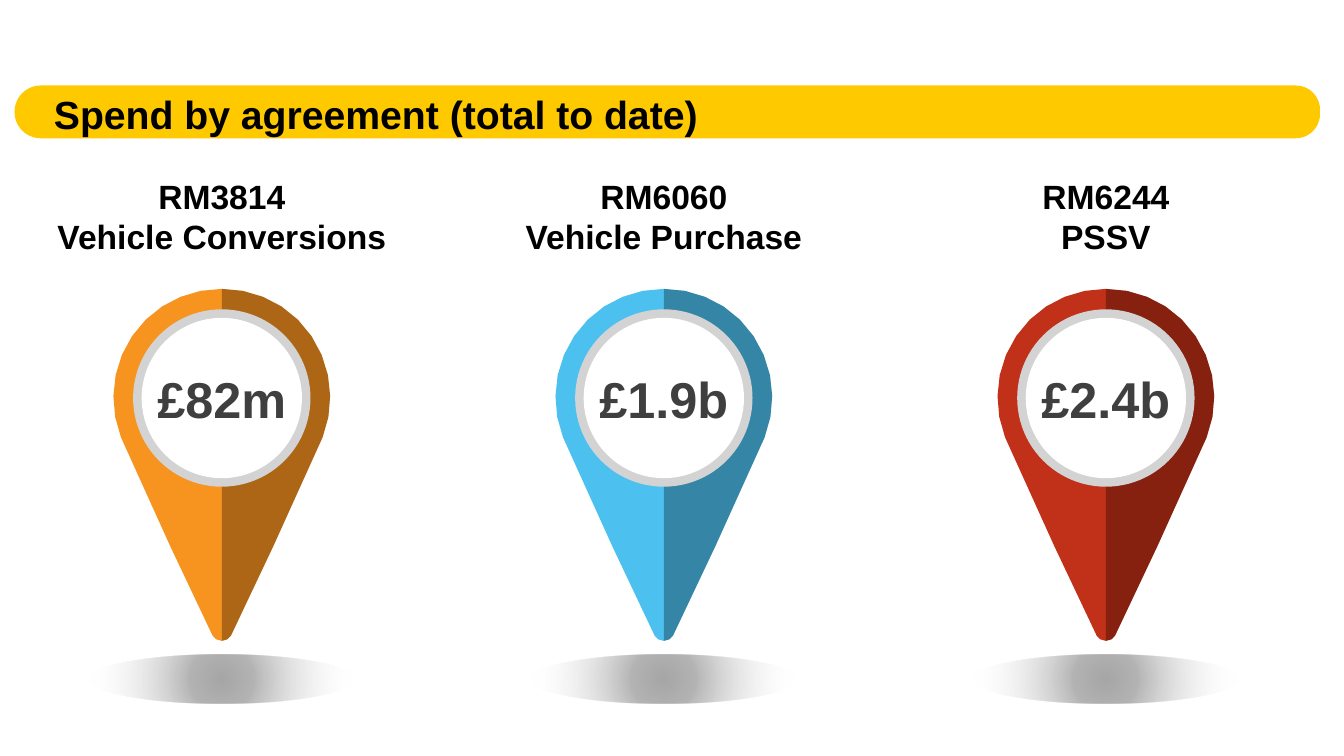
import dataclasses

import pptx
import pptx.dml.color
import pptx.enum.shapes
import pptx.enum.text
import pptx.oxml
import pptx.oxml.ns
import pptx.util

Cm = pptx.util.Cm
MSO_SHAPE = pptx.enum.shapes.MSO_SHAPE
PP_ALIGN = pptx.enum.text.PP_ALIGN
MSO_ANCHOR = pptx.enum.text.MSO_ANCHOR
Point = tuple[float, float]

FIRST_AXIS, PITCH = 5.59, 11.14
PIN_TOP = 7.28
DISC_CENTRE = 10.03


@dataclasses.dataclass(frozen=True)
class Agreement:
    code: str
    name: str
    spend: str
    color: str


AGREEMENTS = [
    Agreement("RM3814", "Vehicle Conversions", "£82m", "F7931F"),
    Agreement("RM6060", "Vehicle Purchase", "£1.9b", "4CC1EF"),
    Agreement("RM6244", "PSSV", "£2.4b", "C13018"),
]


def paint(sp, color: str, alpha: int = 100) -> None:
    """Give a shape a plain fill, with no outline or shadow."""
    sp.shadow.inherit = False
    sp.line.fill.background()
    sp.fill.solid()
    sp.fill.fore_color.rgb = pptx.dml.color.RGBColor.from_string(color)
    if alpha < 100:
        clr = sp.element.spPr.find(".//" + pptx.oxml.ns.qn("a:srgbClr"))
        clr.append(pptx.oxml.parse_xml(
            f'<a:alpha {pptx.oxml.ns.nsdecls("a")} val="{alpha * 1000}"/>'))


def add_run(p, text: str, size: int, color: str) -> None:
    r = p.add_run()
    r.text = text
    r.font.name = "Arial"
    r.font.size = pptx.util.Pt(size)
    r.font.bold = True
    r.font.color.rgb = pptx.dml.color.RGBColor.from_string(color)


def curve(a: Point, b: Point, c: Point, d: Point, steps: int) -> list[Point]:
    """Points along a cubic Bezier curve, without its start."""
    points = []
    for i in range(1, steps + 1):
        t = i / steps
        weights = ((1 - t) ** 3, 3 * t * (1 - t) ** 2, 3 * t * t * (1 - t), t ** 3)
        points.append(tuple(sum(w * q[k] for w, q in zip(weights, (a, b, c, d)))
                            for k in (0, 1)))
    return points


def right_half() -> list[Point]:
    """Right edge of a pin from top to tip, in cm from the top of its axis."""
    top, shoulder, waist, tip = (0, 0), (2.26, 1.19), (2.54, 3.74), (0, 8.87)
    return [top,
            *curve(top, (0.9, 0), (1.75, 0.43), shoulder, 5),
            *curve(shoulder, (2.77, 1.94), (2.87, 2.91), waist, 5),
            (1.3, 6.48), (0.23, 8.74),
            *curve((0.23, 8.74), (0.2, 8.81), (0.1, 8.87), tip, 2)]


def add_outline(shapes, axis: float, points: list[Point]):
    placed = [(Cm(axis + x), Cm(PIN_TOP + y)) for x, y in points]
    builder = shapes.build_freeform(*placed[0])
    builder.add_line_segments(placed[1:], close=True)
    return builder.convert_to_shape()


def add_ellipse(shapes, axis: float, middle: float, width: float, height: float):
    return shapes.add_shape(MSO_SHAPE.OVAL, Cm(axis - width / 2),
                            Cm(middle - height / 2), Cm(width), Cm(height))


def fade(sp) -> None:
    """Fill a shape with a dark centre that fades out to its edge."""
    paint(sp, "000000")
    stops = "".join(
        f'<a:gs pos="{pos * 1000}"><a:srgbClr val="{color}">'
        f'<a:alpha val="{alpha * 1000}"/></a:srgbClr></a:gs>'
        for pos, color, alpha in
        [(0, "000000", 35), (23, "262626", 35), (100, "FFFFFF", 0)])
    grad = pptx.oxml.parse_xml(
        f'<a:gradFill {pptx.oxml.ns.nsdecls("a")}><a:gsLst>{stops}</a:gsLst>'
        '<a:path path="circle"><a:fillToRect l="50000" t="50000" r="50000" '
        'b="50000"/></a:path></a:gradFill>')
    spPr = sp.element.spPr
    spPr.replace(spPr.find(pptx.oxml.ns.qn("a:solidFill")), grad)


def add_pin(s, agreement: Agreement, axis: float) -> None:
    shapes = s.shapes.add_group_shape().shapes
    right = right_half()
    left = [(-x, y) for x, y in reversed(right[1:-1])]
    paint(add_outline(shapes, axis, right + left), agreement.color)
    paint(add_outline(shapes, axis, right), "000000", 30)
    paint(add_ellipse(shapes, axis, DISC_CENTRE, 4.47, 4.47), "D3D3D3")
    disc = add_ellipse(shapes, axis, DISC_CENTRE, 4.04, 4.04)
    paint(disc, "FFFFFF")
    tf = disc.text_frame
    tf.word_wrap = False
    tf.vertical_anchor = MSO_ANCHOR.MIDDLE
    p = tf.paragraphs[0]
    p.alignment = PP_ALIGN.CENTER
    add_run(p, agreement.spend, 36, "3F3F3F")
    fade(add_ellipse(shapes, axis, 17.11, 6.65, 1.23))


def add_heading(s, agreement: Agreement, axis: float) -> None:
    width = 10.08
    tf = s.shapes.add_textbox(Cm(axis - width / 2), Cm(4.48), Cm(width),
                              Cm(2.11)).text_frame
    tf.word_wrap = True
    tf.vertical_anchor = MSO_ANCHOR.BOTTOM
    for p, text in ((tf.paragraphs[0], agreement.code),
                    (tf.add_paragraph(), agreement.name)):
        p.alignment = PP_ALIGN.CENTER
        add_run(p, text, 24, "000000")


def add_title_bar(s) -> None:
    bar = s.shapes.add_shape(MSO_SHAPE.ROUND_2_SAME_RECTANGLE, Cm(16.15),
                             Cm(-13.63), Cm(1.33), Cm(32.9))
    bar.rotation = 90
    bar.adjustments[0], bar.adjustments[1] = 0.46, 0.5
    paint(bar, "FFC900")


def set_title(s, text: str) -> None:
    title = s.shapes.title
    title.left, title.top, title.width, title.height = (
        Cm(1.11), Cm(2.03), Cm(17.42), Cm(0.94))
    s.shapes.element.append(title.element)
    tf = title.text_frame
    tf.auto_size = pptx.enum.text.MSO_AUTO_SIZE.NONE
    tf.word_wrap = True
    tf.vertical_anchor = MSO_ANCHOR.TOP
    tf.margin_left = tf.margin_right = tf.margin_top = tf.margin_bottom = Cm(0.25)
    p = tf.paragraphs[0]
    p.alignment = PP_ALIGN.LEFT
    add_run(p, text, 28, "000000")


def main() -> None:
    prs = pptx.Presentation()
    prs.slide_width, prs.slide_height = Cm(33.87), Cm(19.05)
    s = prs.slides.add_slide(prs.slide_layouts[5])
    add_title_bar(s)
    for add in (add_pin, add_heading):
        for i, agreement in enumerate(AGREEMENTS):
            add(s, agreement, FIRST_AXIS + i * PITCH)
    set_title(s, "Spend by agreement (total to date)")
    prs.save("out.pptx")


if __name__ == "__main__":
    main()
